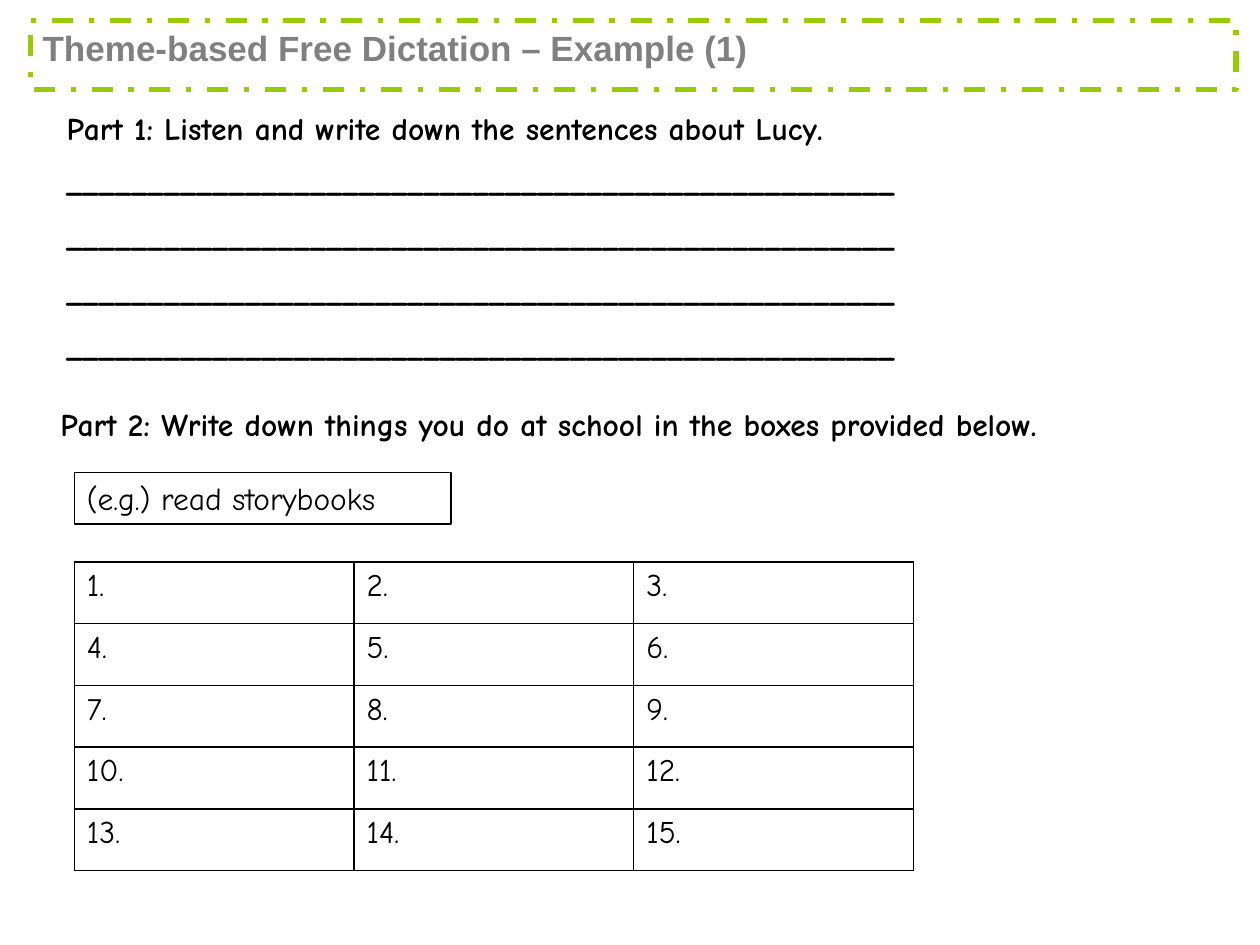
from dataclasses import dataclass

from lxml import etree
from pptx import Presentation
from pptx.dml.color import RGBColor
from pptx.enum.dml import MSO_LINE
from pptx.enum.shapes import MSO_SHAPE
from pptx.enum.text import MSO_ANCHOR, PP_ALIGN
from pptx.oxml.ns import qn
from pptx.util import Inches, Pt

RECTANGLE = MSO_SHAPE.RECTANGLE
DASH_DOT = MSO_LINE.DASH_DOT
TOP = MSO_ANCHOR.TOP
LEFT = PP_ALIGN.LEFT

COLOURS = {"green": "99CC00", "grey": "808080", "black": "000000"}
HAND_FONT = "Comic Neue"
ANSWER_LINE = "_" * 51
ROWS, COLUMNS = 5, 3
COLUMN_WIDTH, ROW_HEIGHT = 2.22, 0.49


@dataclass
class Line:
    text: str
    size: float = 18
    font: str = HAND_FONT
    colour: str = "black"
    bold: bool = False
    before: float = 0
    spacing: float = 1.0


@dataclass
class Area:
    left: float
    top: float
    width: float
    height: float

    def lengths(self) -> list:
        return [Inches(n) for n in (self.left, self.top, self.width, self.height)]


def rgb(name: str) -> RGBColor:
    return RGBColor.from_string(COLOURS[name])


def write(frame, lines: list[Line]) -> None:
    frame.word_wrap = True
    frame.vertical_anchor = TOP
    for index, line in enumerate(lines):
        para = frame.add_paragraph() if index else frame.paragraphs[0]
        para.alignment = LEFT
        para.space_before = Pt(line.before)
        para.line_spacing = line.spacing
        span = para.add_run()
        span.text = line.text
        span.font.size = Pt(line.size)
        span.font.name = line.font
        span.font.bold = line.bold
        span.font.color.rgb = rgb(line.colour)


def add_text(page, area: Area, lines: list[Line]) -> None:
    write(page.shapes.add_textbox(*area.lengths()).text_frame, lines)


def add_frame(page, area: Area, colour: str, weight: float, line: Line):
    box = page.shapes.add_shape(RECTANGLE, *area.lengths())
    box.shadow.inherit = False
    box.fill.background()
    box.line.color.rgb = rgb(colour)
    box.line.width = Pt(weight)
    write(box.text_frame, [line])
    return box


def add_borders(cell, colour: str, weight: float) -> None:
    """Draw all four sides; borders must precede the fill in the cell's XML."""
    properties = cell._tc.get_or_add_tcPr()
    for index, side in enumerate(("a:lnL", "a:lnR", "a:lnT", "a:lnB")):
        border = etree.Element(qn(side), w=str(Pt(weight)))
        fill = etree.SubElement(border, qn("a:solidFill"))
        etree.SubElement(fill, qn("a:srgbClr"), val=COLOURS[colour])
        properties.insert(index, border)


def add_answer_grid(page, left: float, top: float) -> None:
    area = Area(left, top, COLUMNS * COLUMN_WIDTH, ROWS * ROW_HEIGHT)
    grid = page.shapes.add_table(ROWS, COLUMNS, *area.lengths()).table
    grid.first_row = False
    grid.horz_banding = False
    for column in grid.columns:
        column.width = Inches(COLUMN_WIDTH)
    for row in grid.rows:
        row.height = Inches(ROW_HEIGHT)
    for number, cell in enumerate(grid.iter_cells(), start=1):
        cell.fill.background()
        add_borders(cell, "black", 1)
        write(cell.text_frame, [Line(f"{number}.")])


def main() -> None:
    deck = Presentation()
    deck.slide_width, deck.slide_height = Inches(10), Inches(7.5)
    page = deck.slides.add_slide(deck.slide_layouts[6])

    title = Line("Theme-based Free Dictation – Example (1)", 20, "Arial", "grey",
                 bold=True, before=2)
    banner = add_frame(page, Area(0.24, 0.16, 9.57, 0.55), "green", 3, title)
    banner.line.dash_style = DASH_DOT

    part_one = Line("Part 1: Listen and write down the sentences about Lucy.",
                    bold=True, spacing=0.8)
    answer = Line(ANSWER_LINE, bold=True, before=9.8)
    add_text(page, Area(0.43, 0.87, 8.94, 0.72), [part_one] + [answer] * 4)

    part_two = Line("Part 2: Write down things you do at school in the boxes "
                    "provided below.", bold=True, spacing=0.8)
    add_text(page, Area(0.38, 3.22, 9.18, 0.72), [part_two])

    add_frame(page, Area(0.59, 3.75, 2.99, 0.41), "black", 0.75,
              Line("(e.g.) read storybooks"))
    add_answer_grid(page, 0.59, 4.46)
    deck.save("out.pptx")


if __name__ == "__main__":
    main()
